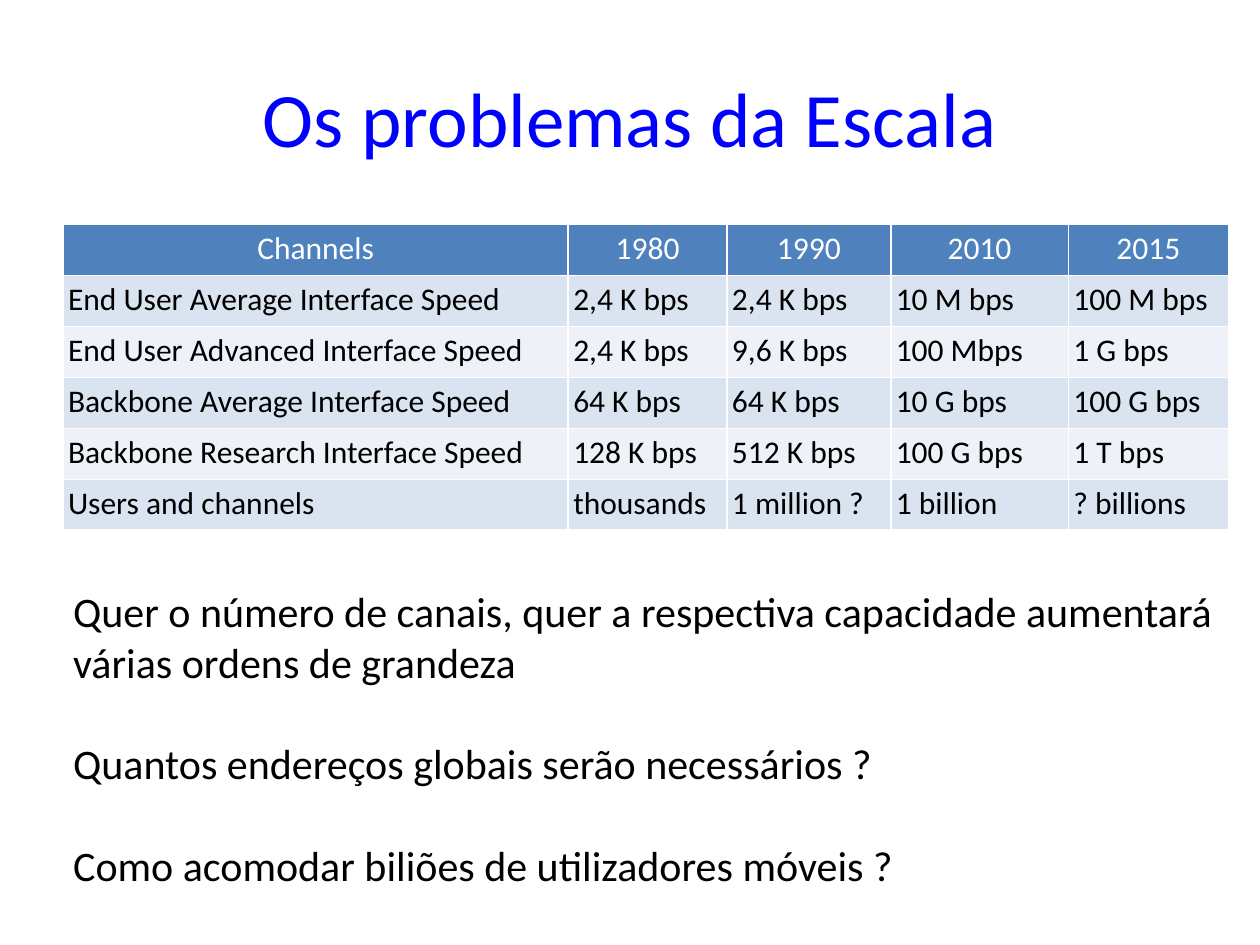
from pptx import Presentation
from pptx.dml.color import RGBColor
from pptx.enum.text import MSO_ANCHOR, PP_ALIGN
from pptx.util import Inches, Pt

CENTER, LEFT = PP_ALIGN.CENTER, PP_ALIGN.LEFT
MIDDLE, TOP = MSO_ANCHOR.MIDDLE, MSO_ANCHOR.TOP

BLUE = RGBColor(0x00, 0x00, 0xFF)
WHITE = RGBColor(0xFF, 0xFF, 0xFF)
BLACK = RGBColor(0x00, 0x00, 0x00)
HEADER_FILL = RGBColor(0x4F, 0x81, 0xBD)
BAND_FILLS = (RGBColor(0xDA, 0xE4, 0xF1), RGBColor(0xEE, 0xF2, 0xF8))

FONT = "Calibri"
INSET = Inches(0.04)
LINE_HEIGHT = 1.22  # Calibri line height as a share of its size

TITLE = "Os problemas da Escala"
COLUMN_WIDTHS = (4.01, 1.26, 1.3, 1.41, 1.27)
ROW_HEIGHT = 2.43 / 6
CHANNELS = (
    ("Channels", "1980", "1990", "2010", "2015"),
    ("End User Average Interface Speed", "2,4 K bps", "2,4 K bps", "10 M bps", "100 M bps"),
    ("End User Advanced Interface Speed", "2,4 K bps", "9,6 K bps", "100 Mbps", "1 G bps"),
    ("Backbone Average Interface Speed", "64 K bps", "64 K bps", "10 G bps", "100 G bps"),
    ("Backbone Research Interface Speed", "128 K bps", "512 K bps", "100 G bps", "1 T bps"),
    ("Users and channels", "thousands", "1 million ?", "1 billion", "? billions"),
)
QUESTIONS = (
    "Quer o número de canais, quer a respectiva capacidade aumentará várias ordens de grandeza",
    "Quantos endereços globais serão necessários ?",
    "Como acomodar biliões de utilizadores móveis ?",
)


def set_insets(holder):
    holder.margin_left = holder.margin_right = INSET
    holder.margin_top = holder.margin_bottom = INSET


def format_paragraph(paragraph, size, color, align=LEFT):
    paragraph.alignment = align
    for run in paragraph.runs:
        run.font.name = FONT
        run.font.size = Pt(size)
        run.font.bold = False
        run.font.color.rgb = color


def add_title(slide):
    title = slide.shapes.title
    title.left, title.top = Inches(0.5), Inches(0.3)
    title.width, title.height = Inches(9), Inches(1.25)
    frame = title.text_frame
    frame.text = TITLE
    frame.vertical_anchor = MIDDLE
    set_insets(frame)
    format_paragraph(frame.paragraphs[0], 44, BLUE, CENTER)


def add_channel_table(slide):
    # The default table style supplies the white rules between cells
    table = slide.shapes.add_table(
        len(CHANNELS), len(COLUMN_WIDTHS), Inches(0.5), Inches(1.78),
        Inches(sum(COLUMN_WIDTHS)), Inches(ROW_HEIGHT * len(CHANNELS))).table
    for column, width in zip(table.columns, COLUMN_WIDTHS):
        column.width = Inches(width)

    for r, values in enumerate(CHANNELS):
        is_header = r == 0
        for c, value in enumerate(values):
            cell = table.cell(r, c)
            cell.text = value
            set_insets(cell)
            cell.fill.solid()
            cell.fill.fore_color.rgb = HEADER_FILL if is_header else BAND_FILLS[(r - 1) % 2]
            format_paragraph(cell.text_frame.paragraphs[0], 18,
                             WHITE if is_header else BLACK,
                             CENTER if is_header else LEFT)


def add_questions(slide, size=24):
    frame = slide.shapes.add_textbox(
        Inches(0.54), Inches(4.61), Inches(9.21), Inches(2.5)).text_frame
    frame.word_wrap = True
    frame.vertical_anchor = TOP
    set_insets(frame)
    frame.text = "\n".join(QUESTIONS)
    for i, paragraph in enumerate(frame.paragraphs):
        format_paragraph(paragraph, size, BLACK)
        if i:
            paragraph.space_before = Pt(size * LINE_HEIGHT)


def main():
    deck = Presentation()
    deck.slide_width, deck.slide_height = Inches(10), Inches(7.5)
    slide = deck.slides.add_slide(deck.slide_layouts.get_by_name("Title Only"))
    add_title(slide)
    add_channel_table(slide)
    add_questions(slide)
    deck.save("out.pptx")


if __name__ == "__main__":
    main()
